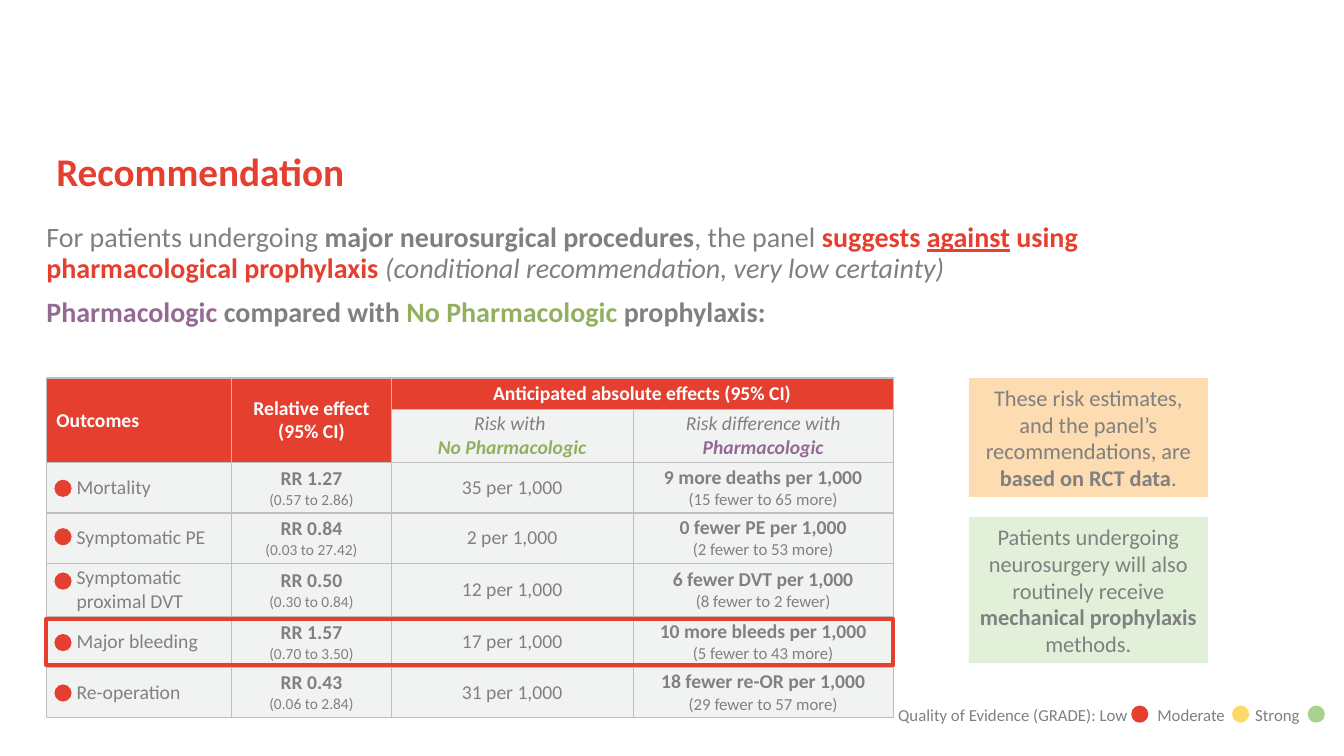
from dataclasses import dataclass

from lxml import etree
from pptx import Presentation
from pptx.dml.color import RGBColor
from pptx.enum.shapes import MSO_SHAPE
from pptx.enum.text import MSO_ANCHOR, PP_ALIGN
from pptx.oxml.ns import qn
from pptx.util import Pt

CENTER, LEFT = PP_ALIGN.CENTER, PP_ALIGN.LEFT
TOP, MIDDLE = MSO_ANCHOR.TOP, MSO_ANCHOR.MIDDLE
RECTANGLE, OVAL = MSO_SHAPE.RECTANGLE, MSO_SHAPE.OVAL
EMU_PER_PX = 9144


@dataclass(frozen=True)
class Theme:
    font: str = "Calibri"
    red: str = "E53F2F"
    gray: str = "808080"
    white: str = "FFFFFF"
    purple: str = "946A95"
    green: str = "92B060"
    cell: str = "F1F3F2"
    border: str = "BFBFBF"
    orange_note: str = "FCDCB0"
    green_note: str = "E2F0D9"
    moderate: str = "FFD966"
    strong: str = "A9D18E"
    title_size: int = 28
    body_size: int = 20
    note_size: int = 16
    table_size: int = 14
    difference_size: int = 12
    interval_size: int = 11
    legend_size: int = 12


THEME = Theme()
BOLD = {"bold": True}
ITALIC = {"italic": True}
RED_BOLD = {"color": THEME.red, "bold": True}
PURPLE_BOLD = {"color": THEME.purple, "bold": True}
GREEN_BOLD = {"color": THEME.green, "bold": True}
LINE_BREAK = ("\n", {})

COLUMN_WIDTHS = [184, 158, 240, 258]
ROW_HEIGHTS = [31, 53, 50, 50, 53, 50, 50]
DOT_SIZE = 17
OUTCOMES = [
    ("Mortality", "RR 1.27", "(0.57 to 2.86)", "35 per 1,000",
     "9 more deaths per 1,000", "(15 fewer to 65 more)", 476),
    ("Symptomatic PE", "RR 0.84", "(0.03 to 27.42)", "2 per 1,000",
     "0 fewer PE per 1,000", "(2 fewer to 53 more)", 524),
    ("Symptomatic proximal DVT", "RR 0.50", "(0.30 to 0.84)", "12 per 1,000",
     "6 fewer DVT per 1,000", "(8 fewer to 2 fewer)", 568),
    ("Major bleeding", "RR 1.57", "(0.70 to 3.50)", "17 per 1,000",
     "10 more bleeds per 1,000", "(5 fewer to 43 more)", 629),
    ("Re-operation", "RR 0.43", "(0.06 to 2.84)", "31 per 1,000",
     "18 fewer re-OR per 1,000", "(29 fewer to 57 more)", 679),
]


def px(length):
    return length * EMU_PER_PX


def color_of(value):
    return RGBColor.from_string(value)


def style_font(font, size=None, color=None, name=None, **flags):
    if name:
        font.name = name
    if size:
        font.size = Pt(size)
    if color:
        font.color.rgb = color_of(color)
    for flag, value in flags.items():
        setattr(font, flag, value)


def write(text_frame, paragraphs, size, color=THEME.gray, align=LEFT):
    for index, runs in enumerate(paragraphs):
        paragraph = text_frame.add_paragraph() if index else text_frame.paragraphs[0]
        paragraph.alignment = align
        style_font(paragraph.font, size, color, THEME.font)
        for text, style in runs:
            if text == "\n":
                paragraph.add_line_break()
                continue
            run = paragraph.add_run()
            run.text = text
            style_font(paragraph.font if len(runs) == 1 else run.font, **style)


def add_text(slide, box, paragraphs, size, color=THEME.gray, inset=True):
    text_frame = slide.shapes.add_textbox(*map(px, box)).text_frame
    text_frame.word_wrap = True
    text_frame.vertical_anchor = TOP
    if not inset:
        text_frame.margin_left = text_frame.margin_right = 0
        text_frame.margin_top = text_frame.margin_bottom = 0
    write(text_frame, paragraphs, size, color)
    return text_frame


def add_figure(slide, kind, box, fill=None, line=None):
    shape = slide.shapes.add_shape(kind, *map(px, box))
    shape.shadow.inherit = False
    if fill:
        shape.fill.solid()
        shape.fill.fore_color.rgb = color_of(fill)
    else:
        shape.fill.background()
    if line:
        shape.line.color.rgb = color_of(line)
        shape.line.width = Pt(3)
    else:
        shape.line.fill.background()
    return shape


def add_dot(slide, left, top, color):
    add_figure(slide, OVAL, (left, top, DOT_SIZE, DOT_SIZE), color)


def add_note(slide, top, height, fill, runs):
    shape = add_figure(slide, RECTANGLE, (961, top, 237, height), fill)
    shape.text_frame.word_wrap = True
    shape.text_frame.vertical_anchor = MIDDLE
    write(shape.text_frame, [runs], THEME.note_size, align=CENTER)


def style_cell(cell, fill):
    properties = cell._tc.get_or_add_tcPr()
    for side in ("lnL", "lnR", "lnT", "lnB"):
        line = etree.SubElement(properties, qn(f"a:{side}"), w=str(Pt(1)))
        solid = etree.SubElement(line, qn("a:solidFill"))
        etree.SubElement(solid, qn("a:srgbClr"), val=THEME.border)
    cell.fill.solid()
    cell.fill.fore_color.rgb = color_of(fill)
    cell.vertical_anchor = MIDDLE
    cell.margin_left = cell.margin_right = px(10)
    cell.margin_top = cell.margin_bottom = 0


def table_rows():
    first = [[[("Outcomes", BOLD)]], [[("Relative effect (95% CI)", BOLD)]],
             [[("Anticipated absolute effects (95% CI)", BOLD)]], [[]]]
    second = [[[]], [[]],
              [[("Risk with ", ITALIC), LINE_BREAK,
                ("No Pharmacologic", GREEN_BOLD | ITALIC)]],
              [[("Risk difference with ", ITALIC),
                ("Pharmacologic", PURPLE_BOLD | ITALIC)]]]
    rows = [first, second]
    for name, ratio, interval, risk, difference, difference_range, _ in OUTCOMES:
        rows.append([
            [[(name, {})]],
            [[(ratio, BOLD)], [(interval, {"size": THEME.interval_size})]],
            [[(risk, {})]],
            [[(difference, BOLD)], [(difference_range, {"size": THEME.difference_size})]],
        ])
    return rows


def add_outcome_table(slide):
    box = (46, 375, sum(COLUMN_WIDTHS), sum(ROW_HEIGHTS))
    table = slide.shapes.add_table(
        len(ROW_HEIGHTS), len(COLUMN_WIDTHS), *map(px, box)).table
    table.first_row = table.horz_banding = False
    for column, width in zip(table.columns, COLUMN_WIDTHS):
        column.width = px(width)
    for row, height in zip(table.rows, ROW_HEIGHTS):
        row.height = px(height)
    for row_index, row in enumerate(table_rows()):
        for column_index, paragraphs in enumerate(row):
            cell = table.cell(row_index, column_index)
            header = row_index == 0 or (row_index == 1 and column_index < 2)
            style_cell(cell, THEME.red if header else THEME.cell)
            if row_index > 1 and column_index == 0:
                cell.margin_left = px(30)
            write(cell.text_frame, paragraphs, THEME.table_size,
                  THEME.white if header else THEME.gray,
                  CENTER if column_index else LEFT)
    for column_index in (0, 1):
        table.cell(0, column_index).merge(table.cell(1, column_index))
    table.cell(0, 2).merge(table.cell(0, 3))


def add_legend(slide):
    text_frame = add_text(slide, (881, 694, 452, 30), [], THEME.legend_size)
    properties = text_frame.paragraphs[0]._p.get_or_add_pPr()
    tabs = etree.SubElement(properties, qn("a:tabLst"))
    for position in (257, 354):
        etree.SubElement(tabs, qn("a:tab"), pos=str(px(position)), algn="l")
    legend = "Quality of Evidence (GRADE): Low\tModerate\tStrong"
    write(text_frame, [[(legend, {})]], THEME.legend_size)
    for left, color in ((1122, THEME.red), (1222, THEME.moderate), (1297, THEME.strong)):
        add_dot(slide, left, 700, color)


def add_recommendation(slide):
    title = add_text(slide, (46, 147, 1005, 34), [[("Recommendation", BOLD)]],
                     THEME.title_size, THEME.red)
    body = add_text(slide, (46, 222, 1219, 78), [
        [("For patients undergoing ", {}), ("major neurosurgical procedures", BOLD),
         (", the panel ", {}), ("suggests ", RED_BOLD),
         ("against", RED_BOLD | {"underline": True}),
         (" using pharmacological prophylaxis ", RED_BOLD),
         ("(conditional recommendation, very low certainty)", ITALIC)],
        [("Pharmacologic ", PURPLE_BOLD), ("compared with ", BOLD),
         ("No Pharmacologic ", GREEN_BOLD), ("prophylaxis:", BOLD)],
    ], THEME.body_size, inset=False)
    for paragraph in title.paragraphs + body.paragraphs:
        paragraph.line_spacing = 0.9
    body.paragraphs[1].space_before = Pt(10)


def main():
    presentation = Presentation()
    presentation.slide_width, presentation.slide_height = px(1333), px(750)
    slide = presentation.slides.add_slide(presentation.slide_layouts[6])
    add_outcome_table(slide)
    add_note(slide, 375, 118, THEME.orange_note, [
        ("These risk estimates, and the panel’s recommendations, are ", {}),
        ("based on RCT data", BOLD), (".", {})])
    add_figure(slide, RECTANGLE, (46, 614, 840, 46), line=THEME.red)
    add_note(slide, 513, 145, THEME.green_note, [
        ("Patients undergoing neurosurgery will also routinely receive ", {}),
        ("mechanical prophylaxis ", BOLD), ("methods.", {})])
    add_recommendation(slide)
    for outcome in OUTCOMES:
        add_dot(slide, 54, outcome[-1], THEME.red)
    add_legend(slide)
    presentation.save("out.pptx")


if __name__ == "__main__":
    main()
